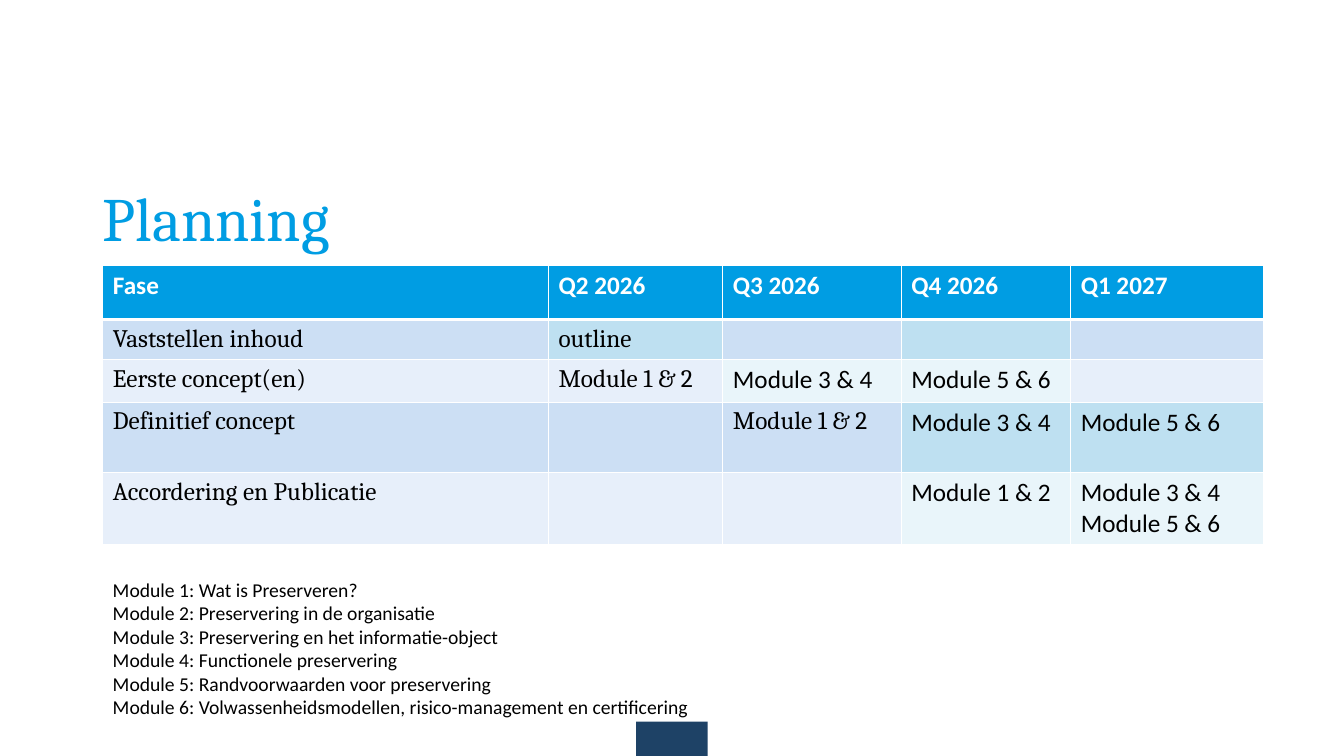
import pptx
import pptx.util
import pptx.dml.color
import pptx.enum.shapes
import pptx.enum.text
import pptx.oxml.ns
from lxml import etree
from pptx.util import Inches

theme = {
    "sky": "009DE3", "navy": "1E4266", "white": "FFFFFF", "black": "000000",
    "blue": "CCDFF4", "pale": "E7EFFA", "aqua": "BEE0F1", "mist": "E9F5FA",
    "serif": "Cambria", "sans": "Calibri",
    "title": 44, "cell": 18, "note": 14, "empty": 12,
}


def tint(name):
    return pptx.dml.color.RGBColor.from_string(theme[name])


def write(frame, lines, face, size, color, bold=False):
    for i, line in enumerate(lines):
        para = frame.add_paragraph() if i else frame.paragraphs[0]
        run = para.add_run()
        run.text = line
        run.font.name = theme[face]
        run.font.size = pptx.util.Pt(theme[size])
        run.font.color.rgb = tint(color)
        run.font.bold = bold


deck = pptx.Presentation()
deck.slide_width = Inches(13.33)
deck.slide_height = Inches(7.5)
slide = deck.slides.add_slide(deck.slide_layouts[6])
shapes = slide.shapes

block = shapes.add_shape(pptx.enum.shapes.MSO_SHAPE.RECTANGLE,
                         Inches(6.31), Inches(7.16), Inches(0.71), Inches(0.35))
block.shadow.inherit = False
block.fill.solid()
block.fill.fore_color.rgb = tint("navy")
block.line.fill.background()

title = shapes.add_textbox(Inches(0.92), Inches(1.57), Inches(11.5), Inches(1.26)).text_frame
title.word_wrap = True
title.vertical_anchor = pptx.enum.text.MSO_ANCHOR.MIDDLE
title.paragraphs[0].line_spacing = 0.9
write(title, ["Planning"], "serif", "title", "sky")

widths = [4.42, 1.73, 1.77, 1.68, 1.91]
heights = [0.54, 0.38, 0.42, 0.7, 0.71]
one, three, five = "Module 1 & 2", "Module 3 & 4", "Module 5 & 6"
texts = [
    ["Fase", "Q2 2026", "Q3 2026", "Q4 2026", "Q1 2027"],
    ["Vaststellen inhoud", "outline", "", "", ""],
    ["Eerste concept(en)", one, three, five, ""],
    ["Definitief concept", "", one, three, five],
    ["Accordering en Publicatie", "", "", one, three + "\n" + five],
]
bands = [("sky", "sky"), ("blue", "aqua"), ("pale", "mist"), ("blue", "aqua"), ("pale", "mist")]
accents = [(), (1, 3), (2, 3), (3, 4), (3, 4)]

grid = shapes.add_table(5, 5, Inches(1.02), Inches(2.63),
                        Inches(sum(widths)), Inches(sum(heights))).table
for col, width in zip(grid.columns, widths):
    col.width = Inches(width)
for r, height in enumerate(heights):
    grid.rows[r].height = Inches(height)
    for c, text in enumerate(texts[r]):
        cell = grid.cell(r, c)
        props = cell._tc.get_or_add_tcPr()
        for side in "LRTB":
            thick = (r, side) in ((0, "B"), (1, "T"))
            line = etree.SubElement(props, pptx.oxml.ns.qn("a:ln" + side),
                                    w=str(pptx.util.Pt(3 if thick else 1)))
            fill = etree.SubElement(line, pptx.oxml.ns.qn("a:solidFill"))
            etree.SubElement(fill, pptx.oxml.ns.qn("a:srgbClr"), val=theme["white"])
        cell.fill.solid()
        cell.fill.fore_color.rgb = tint(bands[r][c in accents[r]])
        if text:
            sans = r == 0 or (r > 1 and c in accents[r])
            write(cell.text_frame, text.split("\n"), "sans" if sans else "serif",
                  "cell", "black" if r else "white", r == 0)
        else:
            etree.SubElement(cell.text_frame.paragraphs[0]._p,
                             pptx.oxml.ns.qn("a:endParaRPr"), sz=str(theme["empty"] * 100))

notes = shapes.add_textbox(Inches(1.02), Inches(5.68), Inches(10.46), Inches(1.82)).text_frame
notes.word_wrap = True
write(notes, [
    "Module 1: Wat is Preserveren?",
    "Module 2: Preservering in de organisatie",
    "Module 3: Preservering en het informatie-object",
    "Module 4: Functionele preservering",
    "Module 5: Randvoorwaarden voor preservering",
    "Module 6: Volwassenheidsmodellen, risico-management en certificering",
], "sans", "note", "black")

deck.save("out.pptx")
